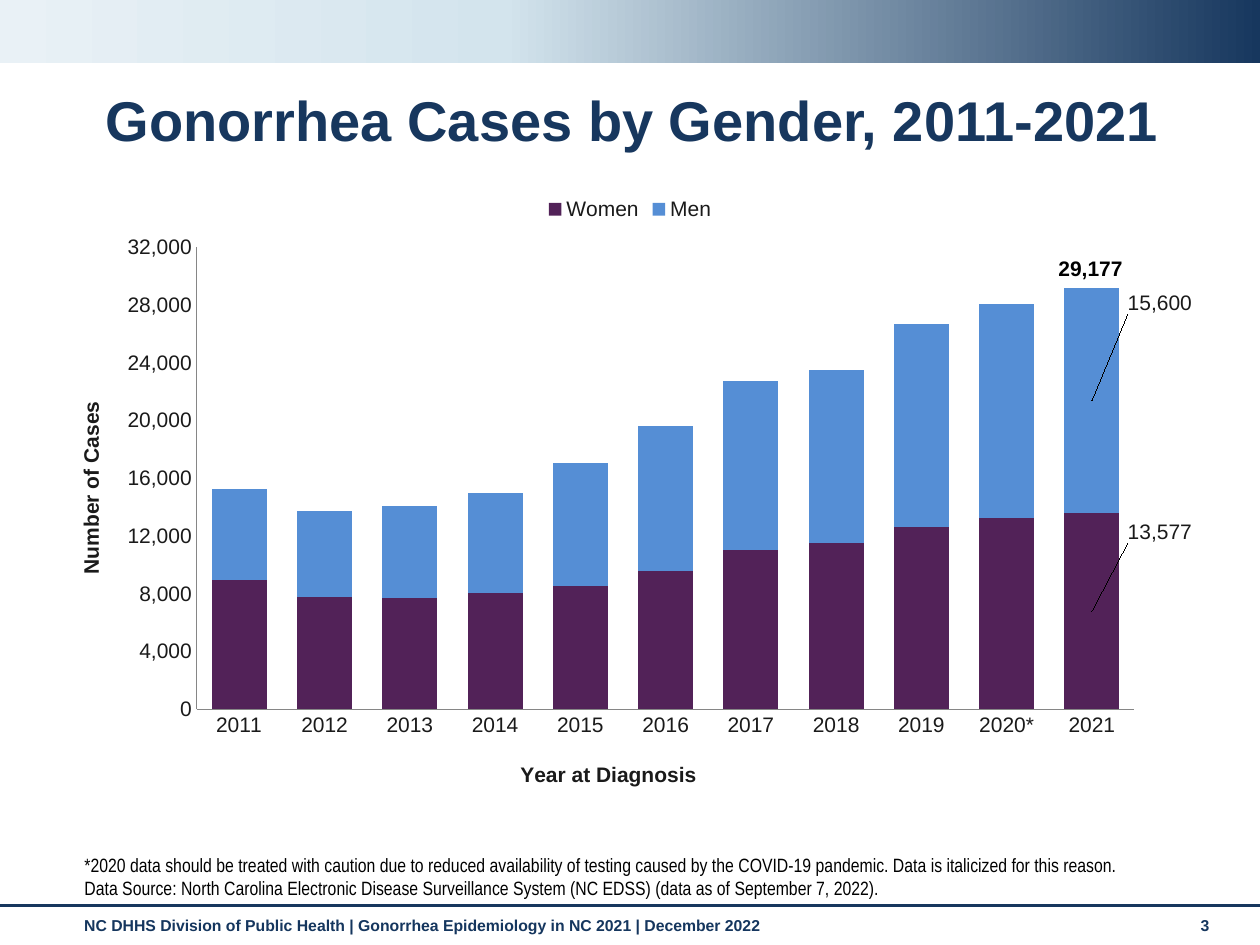
from lxml import etree
from copy import deepcopy
from pptx import Presentation
from pptx.chart.data import CategoryChartData
from pptx.dml.color import RGBColor
from pptx.enum.chart import XL_CHART_TYPE as ChartType, XL_LEGEND_POSITION as LegendPos, XL_TICK_MARK as TickMark
from pptx.enum.shapes import MSO_CONNECTOR as Connector, MSO_SHAPE as Shape
from pptx.enum.text import MSO_ANCHOR as Anchor, PP_ALIGN as Align
from pptx.oxml import parse_xml
from pptx.oxml.ns import nsdecls, qn
from pptx.util import Inches, Pt

COLORS = {name: RGBColor.from_string(value) for name, value in {
    "navy": "17375E", "footer": "15365E", "sky": "D3E4ED", "pale": "E9F1F6",
    "women": "522258", "men": "558ED5", "text": "1A1A1A", "black": "000000",
    "axis": "868686"}.items()}


def style(font, size, color, bold=False, name="Arial"):
    font.name, font.size, font.bold = name, Pt(size), bold
    font.color.rgb = COLORS[color]


def set_layout(parent, index, inner=False, **fractions):
    """Give a chart part a manual layout, as fractions of the chart."""
    for old in parent.findall(qn("c:layout")):
        parent.remove(old)
    layout = parse_xml(f"<c:layout {nsdecls('c')}><c:manualLayout/></c:layout>")
    parts = [("layoutTarget", "inner")] if inner else []
    if parent.tag != qn("c:dLbl"):
        parts += [("xMode", "edge"), ("yMode", "edge")]
    for tag, value in parts + list(fractions.items()):
        etree.SubElement(layout[0], qn(f"c:{tag}")).set("val", str(value))
    parent.insert(index, layout)


prs = Presentation()
prs.slide_width, prs.slide_height = Inches(10), Inches(7.5)
s = prs.slides.add_slide(prs.slide_layouts[1])

# Header band and footer rule
band = s.shapes.add_shape(Shape.RECTANGLE, 0, 0, Inches(10), Inches(0.5))
band.shadow.inherit = False
band.line.fill.background()
band.fill.gradient()
band.fill.gradient_angle = 180
stop_list = band._element.spPr.find(f".//{qn('a:gsLst')}")
stop_list.append(deepcopy(stop_list[0]))
for stop, (position, color) in zip(band.fill.gradient_stops, [(0, "navy"), (0.6, "sky"), (1, "pale")]):
    stop.position = position
    stop.color.rgb = COLORS[color]

rule = s.shapes.add_connector(Connector.STRAIGHT, 0, Inches(7.19), Inches(10), Inches(7.19))
rule.line.color.rgb = COLORS["navy"]
rule.line.width = Pt(1.75)
etree.SubElement(rule._element.spPr, qn("a:effectLst"))

# Title
title = s.shapes.title
title.left, title.top, title.width, title.height = map(Inches, (0.74, 0.68, 9, 0.6))
title.text_frame.text = "Gonorrhea Cases by Gender, 2011-2021"
p = title.text_frame.paragraphs[0]
p.alignment, p.line_spacing = Align.LEFT, 0.9
style(p.runs[0].font, 32, "navy", bold=True)

# Stacked column chart
data = CategoryChartData(number_format="#,##0")
data.categories = [str(year) + "*" * (year == 2020) for year in range(2011, 2022)]
data.add_series("Women", [8972, 7750, 7744, 8079, 8576, 9568, 11033, 11485, 12640, 13266, 13577])
data.add_series("Men", [6315, 5962, 6362, 6896, 8475, 10029, 11696, 12051, 14067, 14809, 15600])
chart = s.shapes.add_chart(ChartType.COLUMN_STACKED, Inches(0.5), Inches(1.46),
                           Inches(9), Inches(4.85), data).chart
style(chart.font, 12, "text")
chart.has_title = False
chart.has_legend = True
chart.legend.position = LegendPos.TOP
chart.legend.include_in_layout = False
set_layout(chart._chartSpace.chart.plotArea, 0, inner=True, x=0.118, y=0.104, w=0.827, h=0.756)

for axis, text, x, y in [(chart.category_axis, "Year at Diagnosis", 0.4, 0.94),
                         (chart.value_axis, "Number of Cases", 0.01, 0.35)]:
    axis.has_major_gridlines = False
    axis.major_tick_mark = axis.minor_tick_mark = TickMark.NONE
    axis.format.line.color.rgb = COLORS["axis"]
    axis.format.line.width = Pt(0.75)
    axis.axis_title.text_frame.text = text
    style(axis.axis_title.text_frame.paragraphs[0].runs[0].font, 12, "text", bold=True)
    set_layout(axis.axis_title._element, 1, x=x, y=y)

values = chart.value_axis
values.minimum_scale, values.maximum_scale, values.major_unit = 0, 32000, 4000
values.tick_labels.number_format = "#,##0"
values.tick_labels.number_format_is_linked = False

plot = chart.plots[0]
plot.gap_width, plot.overlap, plot.vary_by_categories = 55, 100, False
for series, color, rise in zip(plot.series, ("women", "men"), (-0.13, -0.16)):
    series.format.fill.solid()
    series.format.fill.fore_color.rgb = COLORS[color]
    style(series.points[10].data_label.font, 12, "text")
    series.data_labels.show_value = False
    labels = series.data_labels._element
    set_layout(labels.find(qn("c:dLbl")), 1, x=0.06, y=rise)
    leader = labels.find(qn("c:showLeaderLines"))
    if leader is None:
        leader = etree.SubElement(labels, qn("c:showLeaderLines"))
    leader.set("val", "1")

# Footnotes
notes = s.placeholders[1]
notes.left, notes.top, notes.width, notes.height = map(Inches, (0.57, 6.83, 8.74, 0.36))
tf = notes.text_frame
tf.vertical_anchor = Anchor.BOTTOM
tf.text = ("*2020 data should be treated with caution due to reduced availability of testing caused "
           "by the COVID-19 pandemic. Data is italicized for this reason.\n"
           "Data Source: North Carolina Electronic Disease Surveillance System (NC EDSS) "
           "(data as of September 7, 2022).")
for p in tf.paragraphs:
    p.space_before = Pt(0)
    pPr = p._p.get_or_add_pPr()
    pPr.set("marL", "0")
    pPr.set("indent", "0")
    etree.SubElement(pPr, qn("a:buNone"))
    style(p.runs[0].font, 11, "black", name="Arial Narrow")

# 2021 total, footer and slide number
for text, box, size, color, align in [
        ("29,177", (8.2, 1.98, 0.91, 0.3), 12, "black", Align.CENTER),
        ("NC DHHS Division of Public Health | Gonorrhea Epidemiology in NC 2021 | December 2022",
         (0.57, 7.22, 8.74, 0.29), 9, "footer", Align.LEFT),
        ("3", (9.43, 7.22, 0.44, 0.3), 9, "footer", Align.LEFT)]:
    tf = s.shapes.add_textbox(*map(Inches, box)).text_frame
    tf.word_wrap = True
    tf.text = text
    tf.paragraphs[0].alignment = align
    style(tf.paragraphs[0].runs[0].font, size, color, bold=True)

prs.save("out.pptx")
